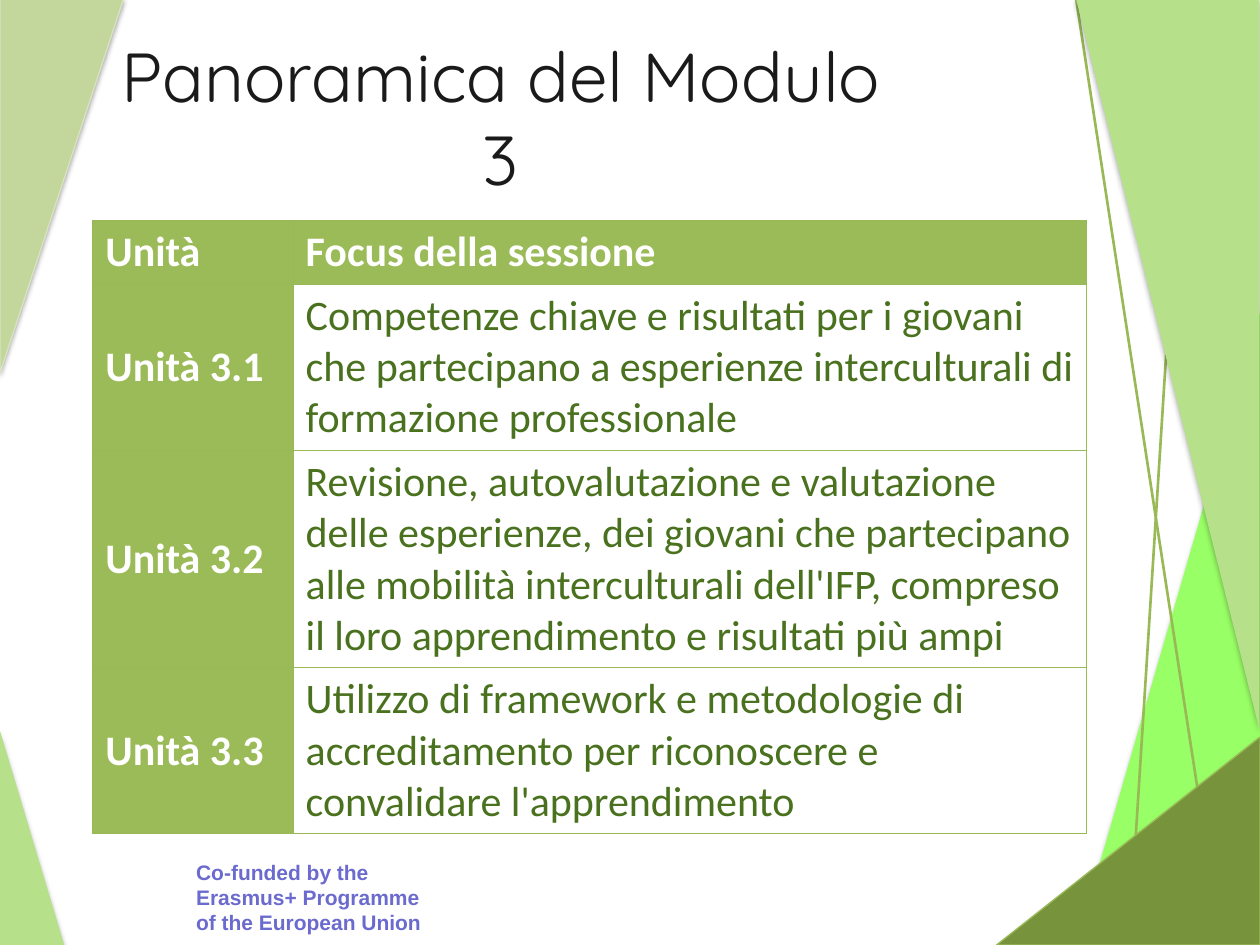
from lxml import etree
from pptx import Presentation
from pptx.dml.color import RGBColor
from pptx.enum.shapes import MSO_CONNECTOR, MSO_SHAPE
from pptx.enum.text import MSO_ANCHOR, PP_ALIGN
from pptx.oxml import parse_xml
from pptx.oxml.ns import nsdecls, qn
from pptx.util import Pt

NEON = RGBColor(0x99, 0xFF, 0x66)
LIGHT_GREEN = RGBColor(0xB7, 0xE0, 0x8B)
SAGE = RGBColor(0xC3, 0xD6, 0x9B)
PALE_SAGE = RGBColor(0xD7, 0xE4, 0xBD)
OLIVE = RGBColor(0x77, 0x93, 0x3C)
LINE_GREEN = RGBColor(0x98, 0xB9, 0x55)
TABLE_GREEN = RGBColor(0x9B, 0xBB, 0x59)
TEXT_GREEN = RGBColor(0x49, 0x71, 0x1E)
VIOLET = RGBColor(0x6B, 0x6B, 0xCF)
INK = RGBColor(0x1A, 0x1A, 0x1A)
WHITE = RGBColor(0xFF, 0xFF, 0xFF)

TITLE = "Panoramica del Modulo 3"
FUNDING = "Co-funded by the Erasmus+ Programme of the European Union"
UNITS = [
    ("Unità", "Focus della sessione"),
    ("Unità 3.1", "Competenze chiave e risultati per i giovani che partecipano a "
                  "esperienze interculturali di formazione professionale"),
    ("Unità 3.2", "Revisione, autovalutazione e valutazione delle esperienze, dei "
                  "giovani che partecipano alle mobilità interculturali dell'IFP, "
                  "compreso il loro apprendimento e risultati più ampi"),
    ("Unità 3.3", "Utilizzo di framework e metodologie di accreditamento per "
                  "riconoscere e convalidare l'apprendimento"),
]
LINES_PER_ROW = (1, 3, 4, 3)
LINE_HEIGHT, CELL_PADDING = 29.25, 7.2
COLUMN_WIDTHS = (114.5, 453.6)

# left, top, width, height, flips, fill, outline
BACK_TRIANGLES = [
    (614.9, 173.5, 106.6, 366.5, "H", NEON, None),
    (0, 417.6, 36.7, 122.4, "", LIGHT_GREEN, None),
    (0, -0.7, 70.6, 213.8, "V", SAGE, PALE_SAGE),
]
FRONT_TRIANGLES = [
    (614.9, -0.7, 104.8, 417.6, "HV", LIGHT_GREEN, None),
    (569.5, 421.2, 150.5, 118.8, "H", OLIVE, LINE_GREEN),
]
RAYS = [(645.1, 540, 669.6, 151.2), (694.8, 519.1, 614.9, -0.7)]

SHADOW = (
    f'<a:effectLst {nsdecls("a")}><a:outerShdw blurRad="{Pt(3.1)}" dist="{Pt(1.8)}" '
    'dir="5400000" rotWithShape="0"><a:srgbClr val="000000"><a:alpha val="35000"/>'
    '</a:srgbClr></a:outerShdw></a:effectLst>'
)


def add_triangle(slide, left, top, width, height, flips, fill, outline):
    shape = slide.shapes.add_shape(
        MSO_SHAPE.RIGHT_TRIANGLE, Pt(left), Pt(top), Pt(width), Pt(height))
    shape.fill.solid()
    shape.fill.fore_color.rgb = fill
    if outline:
        shape.line.color.rgb = outline
        shape.line.width = Pt(0.75)
    else:
        shape.line.fill.background()
    properties = shape._element.spPr
    for axis in flips:
        properties.find(qn("a:xfrm")).set(f"flip{axis}", "1")
    properties.append(parse_xml(SHADOW))


def add_ray(slide, *ends):
    ray = slide.shapes.add_connector(MSO_CONNECTOR.STRAIGHT, *map(Pt, ends))
    ray.line.color.rgb = LINE_GREEN
    ray.line.width = Pt(1.5)
    etree.SubElement(ray._element.spPr, qn("a:effectLst"))


def write(frame, text, size, font_name, color, bold=False):
    frame.word_wrap = True
    run = frame.paragraphs[0].add_run()
    run.text = text
    font = run.font
    font.size, font.name, font.bold = Pt(size), font_name, bold
    font.color.rgb = color


def add_text(slide, left, top, width, height, *text_style):
    box = slide.shapes.add_textbox(Pt(left), Pt(top), Pt(width), Pt(height))
    write(box.text_frame, *text_style)
    return box.text_frame


def set_borders(cell):
    properties = cell._tc.get_or_add_tcPr()
    for position, side in enumerate("LRTB"):
        properties.insert(position, parse_xml(
            f'<a:ln{side} {nsdecls("a")} w="{Pt(0.75)}"><a:solidFill>'
            f'<a:srgbClr val="{LINE_GREEN}"/></a:solidFill></a:ln{side}>'))


def add_unit_table(slide):
    heights = [lines * LINE_HEIGHT + CELL_PADDING for lines in LINES_PER_ROW]
    table = slide.shapes.add_table(
        len(UNITS), len(COLUMN_WIDTHS), Pt(53), Pt(126),
        Pt(sum(COLUMN_WIDTHS)), Pt(sum(heights))).table
    table.first_row = table.horz_banding = False
    for column, width in zip(table.columns, COLUMN_WIDTHS):
        column.width = Pt(width)
    for row_index, (row, texts) in enumerate(zip(table.rows, UNITS)):
        row.height = Pt(heights[row_index])
        for column_index, (cell, text) in enumerate(zip(row.cells, texts)):
            heading = row_index == 0 or column_index == 0
            if heading:
                cell.fill.solid()
                cell.fill.fore_color.rgb = TABLE_GREEN
            else:
                cell.fill.background()
            cell.vertical_anchor = MSO_ANCHOR.MIDDLE if row_index else MSO_ANCHOR.TOP
            write(cell.text_frame, text, 24, "Calibri",
                  WHITE if heading else TEXT_GREEN, heading)
            set_borders(cell)


def main():
    presentation = Presentation()
    presentation.slide_width, presentation.slide_height = Pt(720), Pt(540)
    slide = presentation.slides.add_slide(presentation.slide_layouts[6])
    for triangle in BACK_TRIANGLES:
        add_triangle(slide, *triangle)
    for ray in RAYS:
        add_ray(slide, *ray)
    for triangle in FRONT_TRIANGLES:
        add_triangle(slide, *triangle)
    add_text(slide, 105, 487.5, 144, 51, FUNDING, 12, "Arial", VIOLET, True)
    title = add_text(slide, 53.3, 21.6, 465.8, 90, TITLE, 39.6, "Quicksand", INK)
    title.vertical_anchor = MSO_ANCHOR.MIDDLE
    title.paragraphs[0].alignment = PP_ALIGN.CENTER
    add_unit_table(slide)
    presentation.save("out.pptx")


if __name__ == "__main__":
    main()
